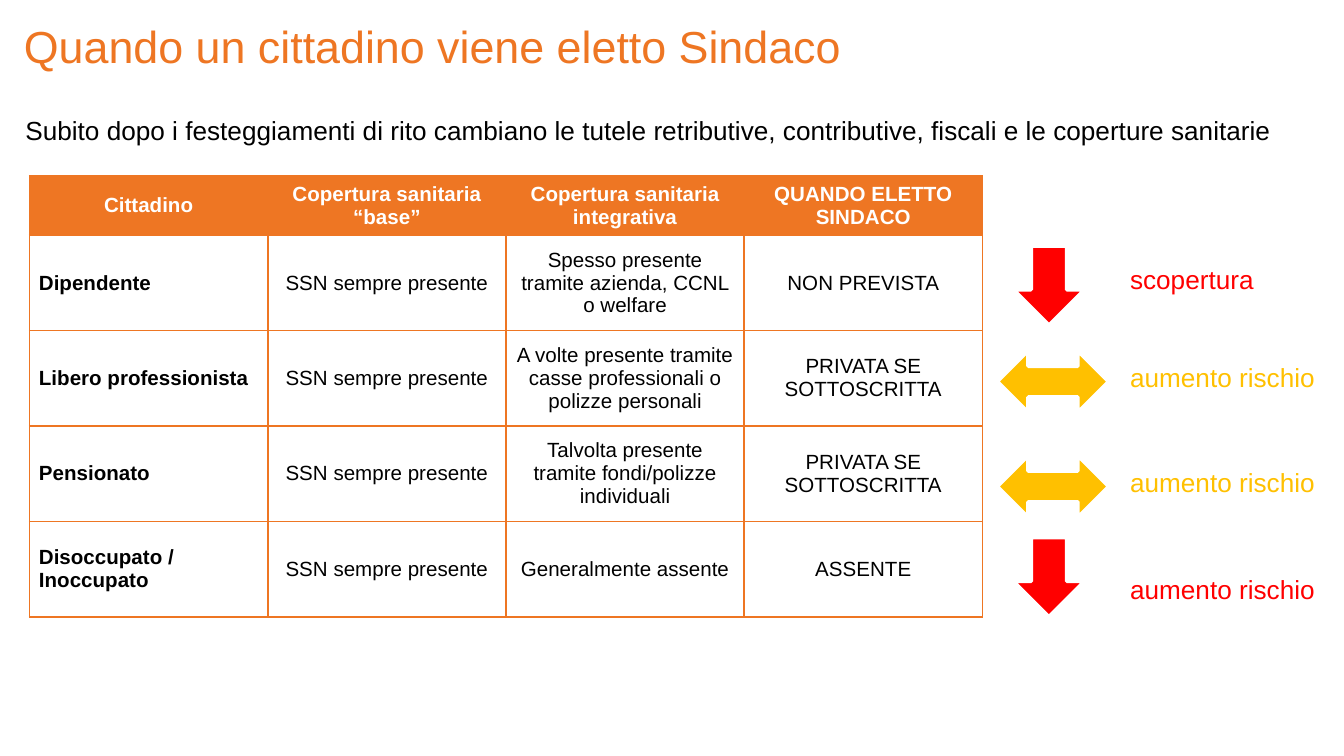
from lxml import etree
from pptx import Presentation, util as u
from pptx.dml.color import RGBColor
from pptx.enum import shapes, text
from pptx.oxml.ns import qn

HUES = {"orange": "EE7623", "black": "000000", "white": "FFFFFF",
        "red": "FF0000", "amber": "FFC000"}


def put(par, words, size, hue, bold=False):
    run = par.add_run()
    run.text = words
    run.font.name = "Arial"
    run.font.size = u.Pt(size)
    run.font.bold = bold
    run.font.color.rgb = RGBColor.from_string(HUES[hue])


def label(left, top, width, height, words, size, hue):
    box = slide.shapes.add_textbox(u.Inches(left), u.Inches(top),
                                   u.Inches(width), u.Inches(height))
    box.text_frame.word_wrap = True
    put(box.text_frame.paragraphs[0], words, size, hue)
    return box.text_frame


# Widescreen page, 16:9
deck = Presentation()
deck.slide_width = u.Inches(10)
deck.slide_height = u.Inches(10) * 9 // 16
slide = deck.slides.add_slide(deck.slide_layouts[6])

# Title and lead sentence
title = label(0.08, 0.04, 7.67, 0.61,
              "Quando un cittadino viene eletto Sindaco", 24, "orange")
title.margin_top = title.margin_bottom = u.Inches(0.1)
label(0.09, 0.8, 9.68, 0.34,
      "Subito dopo i festeggiamenti di rito cambiano le tutele retributive, "
      "contributive, fiscali e le coperture sanitarie", 14, "black")

# Coverage table, with four equal columns
base = "SSN sempre presente"
rows = [
    ("Cittadino", "Copertura sanitaria “base”",
     "Copertura sanitaria integrativa", "QUANDO ELETTO SINDACO"),
    ("Dipendente", base,
     "Spesso presente tramite azienda, CCNL o welfare", "NON PREVISTA"),
    ("Libero professionista", base,
     "A volte presente tramite casse professionali o polizze personali",
     "PRIVATA SE SOTTOSCRITTA"),
    ("Pensionato", base,
     "Talvolta presente tramite fondi/polizze individuali",
     "PRIVATA SE SOTTOSCRITTA"),
    ("Disoccupato / Inoccupato", base, "Generalmente assente", "ASSENTE"),
]
table = slide.shapes.add_table(5, 4, u.Inches(0.22), u.Inches(1.31),
                               u.Inches(7.09), u.Inches(3.28)).table
table.horz_banding = False
for r, row in enumerate(rows):
    head = r == 0
    table.rows[r].height = u.Inches(0.44 if head else 0.71)
    for c, words in enumerate(row):
        cell = table.cell(r, c)
        cell.vertical_anchor = text.MSO_ANCHOR.MIDDLE
        cell.margin_left = cell.margin_right = u.Inches(0.07)
        cell.margin_top = cell.margin_bottom = u.Inches(0.03)
        # Borders come before the fill in the cell properties
        props = cell._tc.get_or_add_tcPr()
        for side in ("lnL", "lnR", "lnT", "lnB"):
            edge = etree.SubElement(props, qn("a:" + side), w=str(u.Pt(1)))
            fill = etree.SubElement(edge, qn("a:solidFill"))
            etree.SubElement(fill, qn("a:srgbClr"), val=HUES["orange"])
        if head:
            cell.fill.solid()
            cell.fill.fore_color.rgb = RGBColor.from_string(HUES["orange"])
        else:
            cell.fill.background()
        par = cell.text_frame.paragraphs[0]
        if head or c > 0:
            par.alignment = text.PP_ALIGN.CENTER
        put(par, words, 11, "white" if head else "black", head or c == 0)

# Risk arrows and their labels
down = (shapes.MSO_SHAPE.DOWN_ARROW, 7.54, 0.53, 0.59)
both = (shapes.MSO_SHAPE.LEFT_RIGHT_ARROW, 7.42, 0.83, 0.46)
risks = [
    (down, 1.83, 1.91, "scopertura", "red"),
    (both, 2.61, 2.64, "aumento rischio", "amber"),
    (both, 3.39, 3.42, "aumento rischio", "amber"),
    (down, 4, 4.22, "aumento rischio", "red"),
]
for (kind, left, width, height), top, line, words, hue in risks:
    arrow = slide.shapes.add_shape(kind, u.Inches(left), u.Inches(top),
                                   u.Inches(width), u.Inches(height))
    arrow.shadow.inherit = False
    arrow.fill.solid()
    arrow.fill.fore_color.rgb = RGBColor.from_string(HUES[hue])
    arrow.line.color.rgb = RGBColor.from_string(HUES["white"])
    arrow.line.width = u.Pt(2)
    label(8.31, line, 1.6, 0.34, words, 14, hue)

deck.save("out.pptx")
